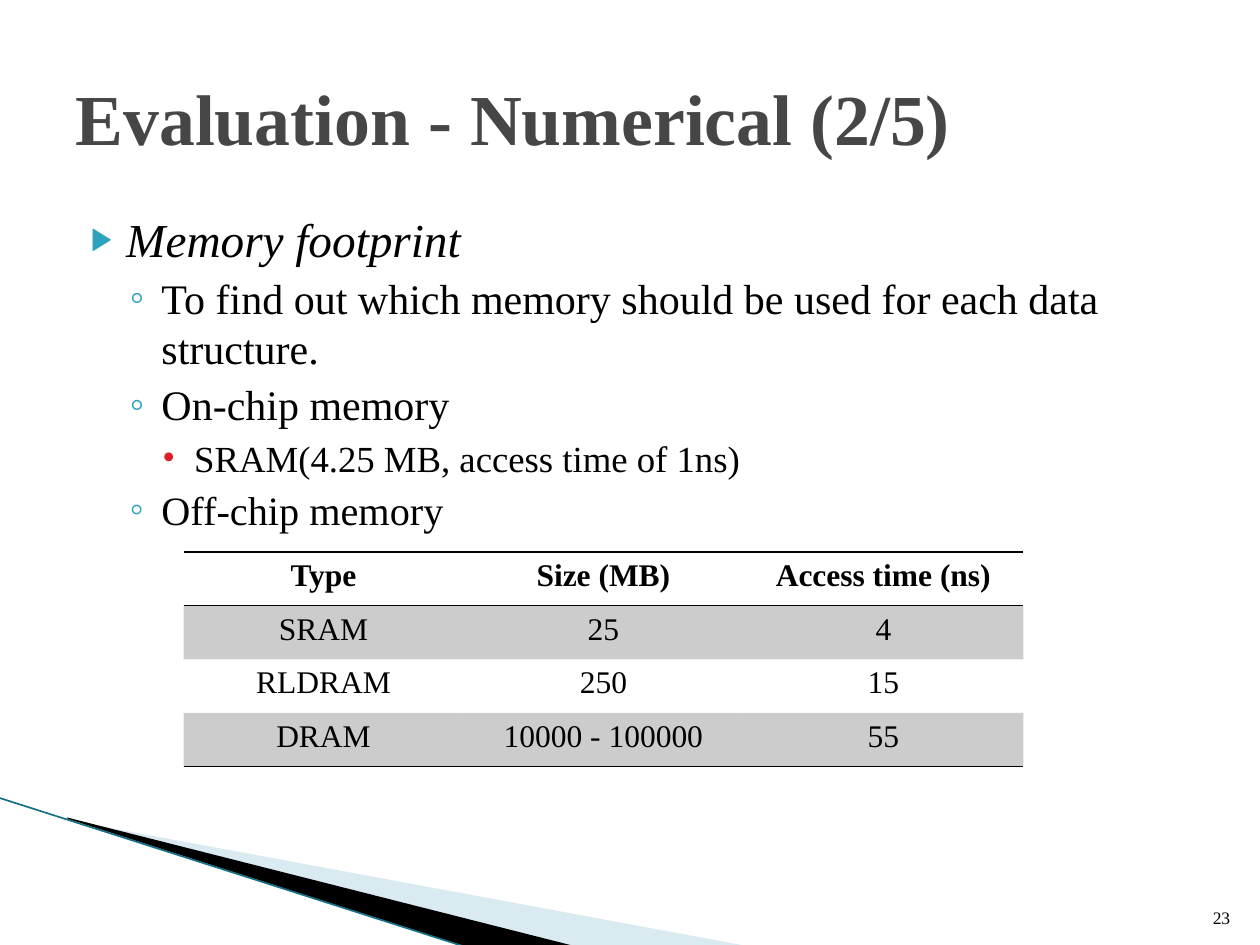
from lxml import etree
from pptx import Presentation
from pptx.dml.color import RGBColor
from pptx.enum.shapes import MSO_CONNECTOR
from pptx.enum.text import MSO_ANCHOR, MSO_AUTO_SIZE, PP_ALIGN
from pptx.oxml.ns import qn
from pptx.util import Cm, Pt

LEFT, CENTER, RIGHT = PP_ALIGN.LEFT, PP_ALIGN.CENTER, PP_ALIGN.RIGHT
TOP, MIDDLE, BOTTOM = MSO_ANCHOR.TOP, MSO_ANCHOR.MIDDLE, MSO_ANCHOR.BOTTOM
STRAIGHT = MSO_CONNECTOR.STRAIGHT
NO_FIT = MSO_AUTO_SIZE.NONE
PLAIN_TABLE = "{2D5ABB26-0587-4C30-8999-92F81FD0307C}"

THEME = {
    "font": "Times New Roman",
    "text": "000000",
    "title": "464646",
    "accent": "2DA2BF",
    "accent2": "DA1F28",
    "pale": "A0CBDC",
    "edge": "167085",
    "title_size": 41,
    "item_size": 27,
    "sub_size": 24,
    "last_size": 23,
    "detail_size": 21,
    "cell_size": 18,
    "number_size": 10,
}


def add_xml(parent, tag, **attrs):
    el = etree.SubElement(parent, qn(tag))
    for key, value in attrs.items():
        el.set(key, str(value))
    return el


def write(p, text, size, color="text", **fmt):
    r = p.add_run()
    r.text = text
    r.font.color.rgb = RGBColor.from_string(THEME[color])
    values = {"name": THEME["font"], "size": Pt(THEME[size]), "bold": False, "italic": False}
    for key, value in (values | fmt).items():
        setattr(r.font, key, value)


prs = Presentation()
prs.slide_width, prs.slide_height = Cm(25.4), Cm(19.05)
s = prs.slides.add_slide(prs.slide_layouts[1])

wedges = [
    ("pale", 40, [(1.4, 16.54), (15.11, 19.08), (11.58, 19.08), (1.4, 16.51)]),
    ("text", 100, [(1.35, 16.48), (11.61, 19.08), (9.45, 19.1), (1.37, 16.51)]),
]
for color, alpha, points in wedges:
    (x, y), *rest = [(Cm(px), Cm(py)) for px, py in points]
    fb = s.shapes.build_freeform(x, y)
    fb.add_line_segments(rest)
    sp = fb.convert_to_shape()
    sp.shadow.inherit = False
    sp.fill.solid()
    sp.fill.fore_color.rgb = RGBColor.from_string(THEME[color])
    sp.line.fill.background()
    if alpha < 100:
        clr = sp._element.spPr.find(".//" + qn("a:srgbClr"))
        add_xml(clr, "a:alpha", val=alpha * 1000)

edge = s.shapes.add_connector(STRAIGHT, Cm(-0.03), Cm(16.08), Cm(9.42), Cm(19.1))
edge.line.color.rgb = RGBColor.from_string(THEME["edge"])
edge.line.width = Pt(0.95)
add_xml(edge._element.spPr, "a:effectLst")

title, body = s.placeholders
number = s.shapes.add_textbox(Cm(24.03), Cm(17.81), Cm(1.02), Cm(1.02))
frames = [
    (title, (1.27, 0.76, 22.86, 3.18), MIDDLE),
    (body, (1.27, 4.11, 22.86, 12.57), TOP),
    (number, (24.03, 17.81, 1.02, 1.02), BOTTOM),
]
for sp, box, anchor in frames:
    for key, value in zip(("left", "top", "width", "height"), box):
        setattr(sp, key, Cm(value))
    for key, value in {"word_wrap": True, "auto_size": NO_FIT, "vertical_anchor": anchor}.items():
        setattr(sp.text_frame, key, value)

p = title.text_frame.paragraphs[0]
p.alignment = LEFT
write(p, "Evaluation - Numerical (2/5)", "title_size", "title", bold=True)

p = number.text_frame.paragraphs[0]
p.alignment = RIGHT
write(p, "23", "number_size")

levels = [
    {"mar": 1.02, "hang": 0.71, "char": "▶", "color": "accent", "pct": 68, "before": 0},
    {"mar": 1.73, "hang": 0.64, "char": "◦", "color": "accent", "pct": 100, "before": 3.2},
    {"mar": 2.39, "hang": 0.64, "char": "•", "color": "accent2", "pct": 100, "before": 3.5},
]
items = [
    (0, "Memory footprint", "item_size"),
    (1, "To find out which memory should be used for each data structure.", "sub_size"),
    (1, "On-chip memory", "sub_size"),
    (2, "SRAM(4.25 MB, access time of 1ns)", "detail_size"),
    (1, "Off-chip memory", "last_size"),
]
tf = body.text_frame
for i, (level, text, size) in enumerate(items):
    p = tf.add_paragraph() if i else tf.paragraphs[0]
    look = levels[level]
    pPr = p._p.get_or_add_pPr()
    pPr.set("marL", str(Cm(look["mar"])))
    pPr.set("indent", str(-Cm(look["hang"])))
    add_xml(add_xml(pPr, "a:buClr"), "a:srgbClr", val=THEME[look["color"]])
    add_xml(pPr, "a:buSzPct", val=look["pct"] * 1000)
    add_xml(pPr, "a:buFont", typeface=THEME["font"])
    add_xml(pPr, "a:buChar", char=look["char"])
    fmt = {"level": level, "alignment": LEFT, "space_before": Pt(look["before"]), "line_spacing": 1.0}
    for key, value in fmt.items():
        setattr(p, key, value)
    write(p, text, size, italic=level == 0)

rows = [
    ("Type", "Size (MB)", "Access time (ns)"),
    ("SRAM", "25", "4"),
    ("RLDRAM", "250", "15"),
    ("DRAM", "10000 - 100000", "55"),
]
borders = {0: ("a:lnT", "a:lnB"), len(rows) - 1: ("a:lnB",)}
table = s.shapes.add_table(len(rows), 3, Cm(3.7), Cm(11.13), Cm(16.93), Cm(4.32)).table
table.first_row = table.horz_banding = False
table._tbl.tblPr.find(qn("a:tableStyleId")).text = PLAIN_TABLE
for i, row in enumerate(rows):
    for j, text in enumerate(row):
        cell = table.cell(i, j)
        tcPr = cell._tc.get_or_add_tcPr()
        for tag in borders.get(i, ()):
            ln = add_xml(tcPr, tag, w=Pt(1))
            add_xml(add_xml(ln, "a:solidFill"), "a:srgbClr", val=THEME["text"])
        if i % 2:
            cell.fill.solid()
            cell.fill.fore_color.rgb = RGBColor.from_string(THEME["text"])
            add_xml(tcPr.find(qn("a:solidFill")).find(qn("a:srgbClr")), "a:alpha", val=20000)
        else:
            cell.fill.background()
        p = cell.text_frame.paragraphs[0]
        p.alignment = CENTER
        write(p, text, "cell_size", bold=i == 0)

prs.save("out.pptx")
